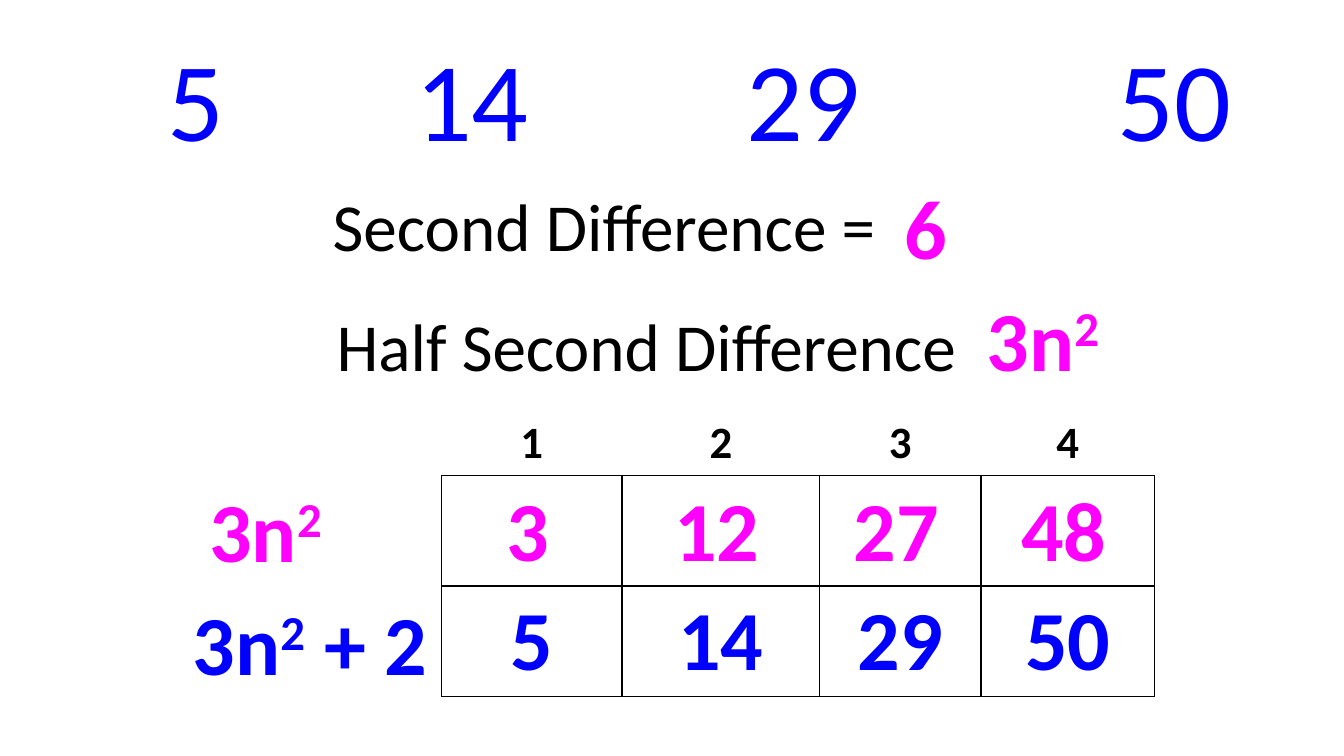
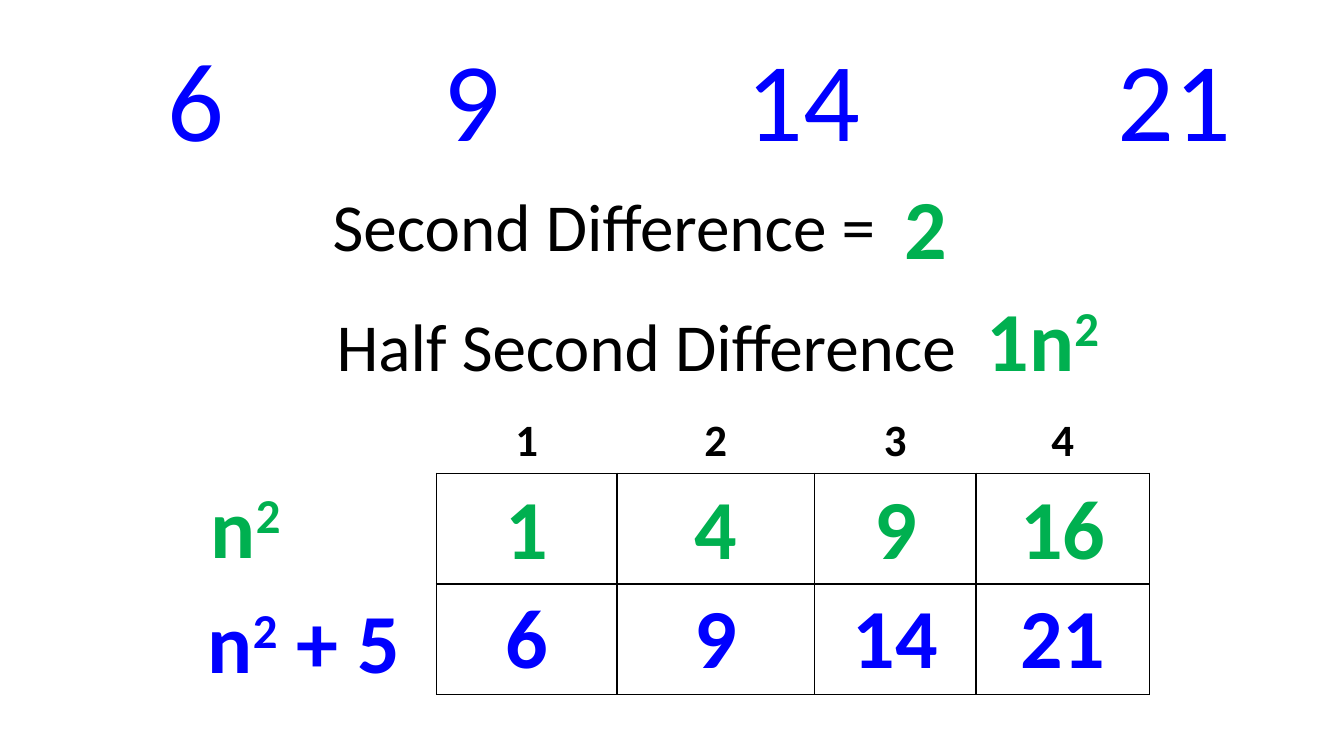
from dataclasses import dataclass

from lxml import etree
from pptx import Presentation
from pptx.dml.color import RGBColor
from pptx.enum.text import MSO_ANCHOR, MSO_AUTO_SIZE, PP_ALIGN
from pptx.oxml.ns import qn
from pptx.slide import Slide
from pptx.table import _Cell
from pptx.util import Inches, Pt

BLUE = RGBColor(0x00, 0x00, 0xFF)
MAGENTA = RGBColor(0xFF, 0x00, 0xFF)
GREEN = RGBColor(0x00, 0xB0, 0x50)
BLACK = RGBColor(0x00, 0x00, 0x00)

LEFT, CENTER, RIGHT = PP_ALIGN.LEFT, PP_ALIGN.CENTER, PP_ALIGN.RIGHT
TOP, MIDDLE, BOTTOM = MSO_ANCHOR.TOP, MSO_ANCHOR.MIDDLE, MSO_ANCHOR.BOTTOM
FIT_SHAPE = MSO_AUTO_SIZE.SHAPE_TO_FIT_TEXT

FONT = "Calibri"
SEQUENCE_COLS = (2.2, 0.93, 1.42, 1.48, 2.2, 1.48, 2.2)
TERM_COLS = (1.79, 1.96, 1.6, 1.72)
HEADER_H, ROW_H = 0.63, 1.1
LINE_H = 1.11  # one line of 60 pt text with its insets


@dataclass(frozen=True)
class Style:
    size: int
    color: RGBColor
    bold: bool = False


@dataclass(frozen=True)
class Span:
    text: str
    style: Style
    superscript: bool = False


@dataclass(frozen=True)
class Label:
    left: float
    top: float
    width: float


@dataclass(frozen=True)
class Example:
    terms: tuple[str, ...]
    square_terms: tuple[str, ...]
    accent: RGBColor
    difference: str
    half: str
    square: str
    constant: str
    grid_left: float
    grid_top: float
    square_left: float
    square_label: Label
    rule_label: Label


SEQUENCE = Style(80, BLUE)
STATEMENT = Style(48, BLACK)
POSITION = Style(32, BLACK, True)
ANSWER = Style(60, BLUE, True)

EXAMPLES = (
    Example(("5", "14", "29", "50"), ("3", "12", "27", "48"), MAGENTA,
            "6", "3n", "3n", " + 2", 4.38, 4.08, 4.34,
            Label(1.93, 4.7, 1.36), Label(1.78, 5.82, 2.59)),
    Example(("6", "9", "14", "21"), ("1", "4", "9", "16"), GREEN,
            "2", "1n", "n", " + 5", 4.33, 4.06, 4.33,
            Label(1.94, 4.66, 0.94), Label(1.93, 5.8, 2.17)),
)


def squared(base: str, style: Style) -> list[Span]:
    return [Span(base, style), Span("2", style, True)]


def write(p, spans: list[Span], align: PP_ALIGN) -> None:
    p.alignment = align
    for span in spans:
        r = p.add_run()
        r.text = span.text
        font = {"name": FONT, "size": Pt(span.style.size), "bold": span.style.bold}
        for name, value in font.items():
            setattr(r.font, name, value)
        r.font.color.rgb = span.style.color
        if span.superscript:
            r.font._element.set("baseline", "30000")


def add_text(s: Slide, at: tuple[float, float, float, float], spans: list[Span],
             align: PP_ALIGN = LEFT, wrap: bool = True) -> None:
    tf = s.shapes.add_textbox(*map(Inches, at)).text_frame
    tf.word_wrap = wrap
    tf.auto_size = FIT_SHAPE
    write(tf.paragraphs[0], spans, align)


def set_borders(cell: _Cell, visible: bool) -> None:
    tc_pr = cell._tc.get_or_add_tcPr()
    for i, side in enumerate(("a:lnL", "a:lnR", "a:lnT", "a:lnB")):
        ln = etree.Element(qn(side), w=str(Pt(1)))
        if visible:
            fill = etree.SubElement(ln, qn("a:solidFill"))
            etree.SubElement(fill, qn("a:srgbClr"), val=str(BLACK))
        else:
            etree.SubElement(ln, qn("a:noFill"))
        tc_pr.insert(i, ln)


def add_grid(s: Slide, left: float, top: float, cols: tuple[float, ...],
             heights: tuple[float, ...], texts: tuple[str, ...], style: Style,
             bordered_rows: tuple[int, ...] = (), anchor: MSO_ANCHOR = TOP,
             insets: dict[str, float] | None = None) -> None:
    """Add a table whose first row holds the texts; further rows stay empty."""
    table = s.shapes.add_table(len(heights), len(cols), Inches(left), Inches(top),
                               Inches(sum(cols)), Inches(sum(heights))).table
    table.first_row = table.horz_banding = False
    for col, width in zip(table.columns, cols):
        col.width = Inches(width)
    for row_no, (row, height) in enumerate(zip(table.rows, heights)):
        row.height = Inches(height)
        for col_no, cell in enumerate(row.cells):
            cell.fill.background()
            set_borders(cell, row_no in bordered_rows)
            cell.vertical_anchor = anchor
            for name, value in (insets or {}).items():
                setattr(cell, name, Inches(value))
            if row_no == 0 and texts[col_no]:
                write(cell.text_frame.paragraphs[0],
                      [Span(texts[col_no], style)], CENTER)


def add_sequence(s: Slide, terms: tuple[str, ...]) -> None:
    """Put the terms in every other column, with spacer columns between."""
    texts = [""] * len(SEQUENCE_COLS)
    texts[::2] = terms
    insets = {"margin_left": 0.01, "margin_right": 0.01,
              "margin_top": 0.01, "margin_bottom": 0}
    add_grid(s, 0.84, 0.34, SEQUENCE_COLS, (1.34,), tuple(texts), SEQUENCE,
             anchor=BOTTOM, insets=insets)


def add_example(prs, ex: Example) -> None:
    s = prs.slides.add_slide(prs.slide_layouts[6])
    accent = Style(60, ex.accent, True)
    add_sequence(s, ex.terms)

    rule = ex.rule_label
    add_text(s, (rule.left, rule.top, rule.width, LINE_H),
             squared(ex.square, ANSWER) + [Span(ex.constant, ANSWER)], CENTER, False)
    positions = tuple(str(n) for n in range(1, len(TERM_COLS) + 1))
    add_grid(s, ex.grid_left, ex.grid_top, TERM_COLS, (HEADER_H, ROW_H),
             positions, POSITION, bordered_rows=(1,))
    add_text(s, (3.24, 2.8, 8.11, LINE_H),
             [Span("Half Second Difference  ", STATEMENT)] + squared(ex.half, accent))
    add_grid(s, ex.grid_left, ex.grid_top + HEADER_H + ROW_H, TERM_COLS, (ROW_H,),
             ex.terms, ANSWER, bordered_rows=(0,))
    add_text(s, (3.2, 1.78, 5.75, 0.91), [Span("Second Difference =", STATEMENT)])

    square = ex.square_label
    add_text(s, (square.left, square.top, square.width, LINE_H),
             squared(ex.square, accent), RIGHT, False)
    add_text(s, (8.79, 1.69, 0.79, LINE_H), [Span(ex.difference, accent)], CENTER)
    add_grid(s, ex.square_left, ex.grid_top + 0.65, TERM_COLS, (ROW_H,),
             ex.square_terms, accent, anchor=MIDDLE)


def main() -> None:
    prs = Presentation()
    prs.slide_width, prs.slide_height = Inches(13.33), Inches(7.5)
    for ex in EXAMPLES:
        add_example(prs, ex)
    prs.save("out.pptx")


if __name__ == "__main__":
    main()
